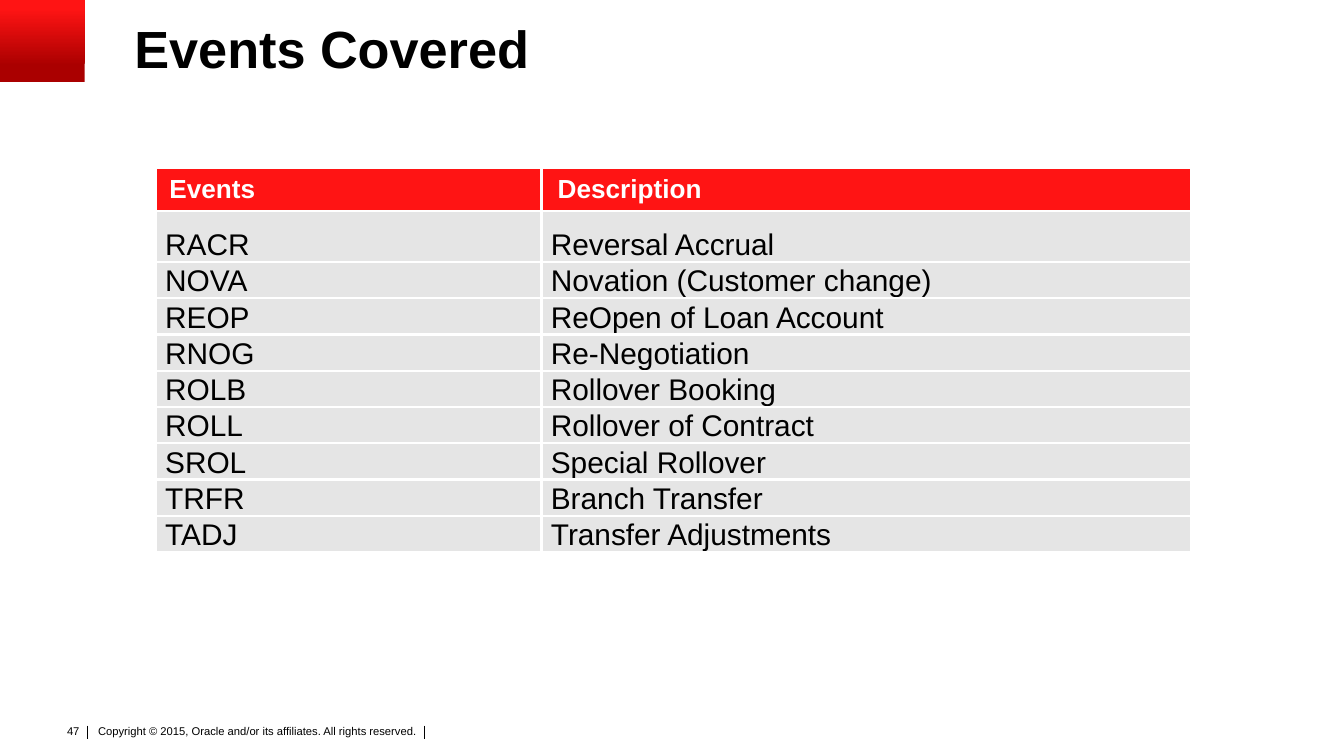
from lxml import etree
from pptx import Presentation, util as u
from pptx.dml.color import RGBColor
from pptx.enum import shapes, text
from pptx.oxml import parse_xml
from pptx.oxml.ns import nsdecls, qn

EVENTS = [
    ("Events", "Description"),
    ("RACR", "Reversal Accrual"),
    ("NOVA", "Novation (Customer change)"),
    ("REOP", "ReOpen of Loan Account"),
    ("RNOG", "Re-Negotiation"),
    ("ROLB", "Rollover Booking"),
    ("ROLL", "Rollover of Contract"),
    ("SROL", "Special Rollover"),
    ("TRFR", "Branch Transfer"),
    ("TADJ", "Transfer Adjustments"),
]


def color(value):
    return RGBColor.from_string(value)


def grid(*steps):
    return [u.Inches(step / 10) for step in steps]


def write(frame, words, size=16, ink="000000", bold=False, align=text.PP_ALIGN.LEFT,
          anchor=text.MSO_ANCHOR.TOP, spacing=1.0, wrap=True):
    frame.word_wrap = wrap
    frame.vertical_anchor = anchor
    para = frame.paragraphs[0]
    para.alignment = align
    para.line_spacing = spacing
    span = para.add_run()
    span.text = words
    span.font.name = "Arial"
    span.font.size = u.Pt(size)
    span.font.bold = bold
    span.font.color.rgb = color(ink)


class Board:
    """Draw styled elements on a slide, measured on a grid of 100 columns across."""

    red, dark, gray, white, black = "FF1414", "AA0000", "E5E5E5", "FFFFFF", "000000"

    def __init__(self, deck):
        self.page = deck.slides.add_slide(deck.slide_layouts[5])

    def title(self, words, *place):
        box = self.page.shapes.title
        box.left, box.top, box.width, box.height = grid(*place)
        frame = box.text_frame
        frame.auto_size = text.MSO_AUTO_SIZE.NONE
        frame.margin_left = frame.margin_right = frame.margin_top = frame.margin_bottom = 0
        write(frame, words, size=28, bold=True, spacing=0.9)

    def corner(self, *place):
        box = self.page.shapes.add_shape(shapes.MSO_SHAPE.RECTANGLE, *grid(*place))
        box.shadow.inherit = False
        box.line.fill.background()
        box.fill.gradient()
        box.fill.gradient_angle = 90
        for stop, position, tone in zip(box.fill.gradient_stops, (0.2, 0.9), (self.dark, self.red)):
            stop.position = position
            stop.color.rgb = color(tone)

    def label(self, words, *place, margins=(1, 0.5), **style):
        frame = self.page.shapes.add_textbox(*grid(*place)).text_frame
        frame.margin_left, frame.margin_top = grid(*margins)
        frame.margin_right, frame.margin_bottom = grid(*margins)
        write(frame, words, size=6, **style)

    def divider(self, column, top, bottom):
        line = self.page.shapes.add_connector(
            shapes.MSO_CONNECTOR.STRAIGHT, *grid(column, top, column, bottom))
        line.line.color.rgb = color(self.black)
        line.line.width = u.Pt(0.5)
        etree.SubElement(line._element.spPr, qn("a:effectLst"))

    def cell(self, cell, words, margins, fill, sides, **style):
        cell.margin_left, cell.margin_right, cell.margin_top, cell.margin_bottom = grid(*margins)
        write(cell.text_frame, words, **style)
        cell.vertical_anchor = style["anchor"]
        properties = cell._tc.get_or_add_tcPr()
        for side in sides:
            properties.append(parse_xml(
                f'<a:ln{side} {nsdecls("a")} w="{u.Pt(1.5)}"><a:solidFill>'
                f'<a:srgbClr val="{self.white}"/></a:solidFill></a:ln{side}>'))
        cell.fill.solid()
        cell.fill.fore_color.rgb = color(fill)

    def table(self, rows, left, top, widths, heights):
        table = self.page.shapes.add_table(
            len(rows), len(widths), *grid(left, top, sum(widths), sum(heights))).table
        table.horz_banding = False
        for column, width in zip(table.columns, grid(*widths)):
            column.width = width
        for row, height in zip(table.rows, grid(*heights)):
            row.height = height
        for r, entries in enumerate(rows):
            for c, words in enumerate(entries):
                sides = ("L" if c else "R") + ("TB" if r else "B")
                if r == 0:
                    self.cell(table.cell(r, c), words, (1 + 0.2 * c, 1, 0.4, 0.4), self.red, sides,
                              size=14, ink=self.white, bold=True, anchor=text.MSO_ANCHOR.MIDDLE)
                else:
                    self.cell(table.cell(r, c), words, (0.7, 0.7, 0, 0), self.gray, sides,
                              anchor=text.MSO_ANCHOR.BOTTOM)


def main():
    deck = Presentation()
    deck.slide_width, deck.slide_height = grid(100, 56.25)
    board = Board(deck)
    board.label("Copyright © 2015, Oracle and/or its affiliates. All rights reserved.",
                6.9, 53.7, 27.4, 2.4, margins=(0.4, 0.2))
    for column in (6.5, 31.6):
        board.divider(column, 54, 55)
    board.label("47", 3.9, 53.4, 3, 2, align=text.PP_ALIGN.RIGHT, wrap=False)
    board.corner(0, 0, 6.3, 6.1)
    board.title("Events Covered", 10, 1.75, 90, 4.8)
    board.table(EVENTS, 11.6, 12.5, (28.7, 48.3), [3.2, 3.8] + [2.7] * (len(EVENTS) - 2))
    deck.save("out.pptx")


if __name__ == "__main__":
    main()
